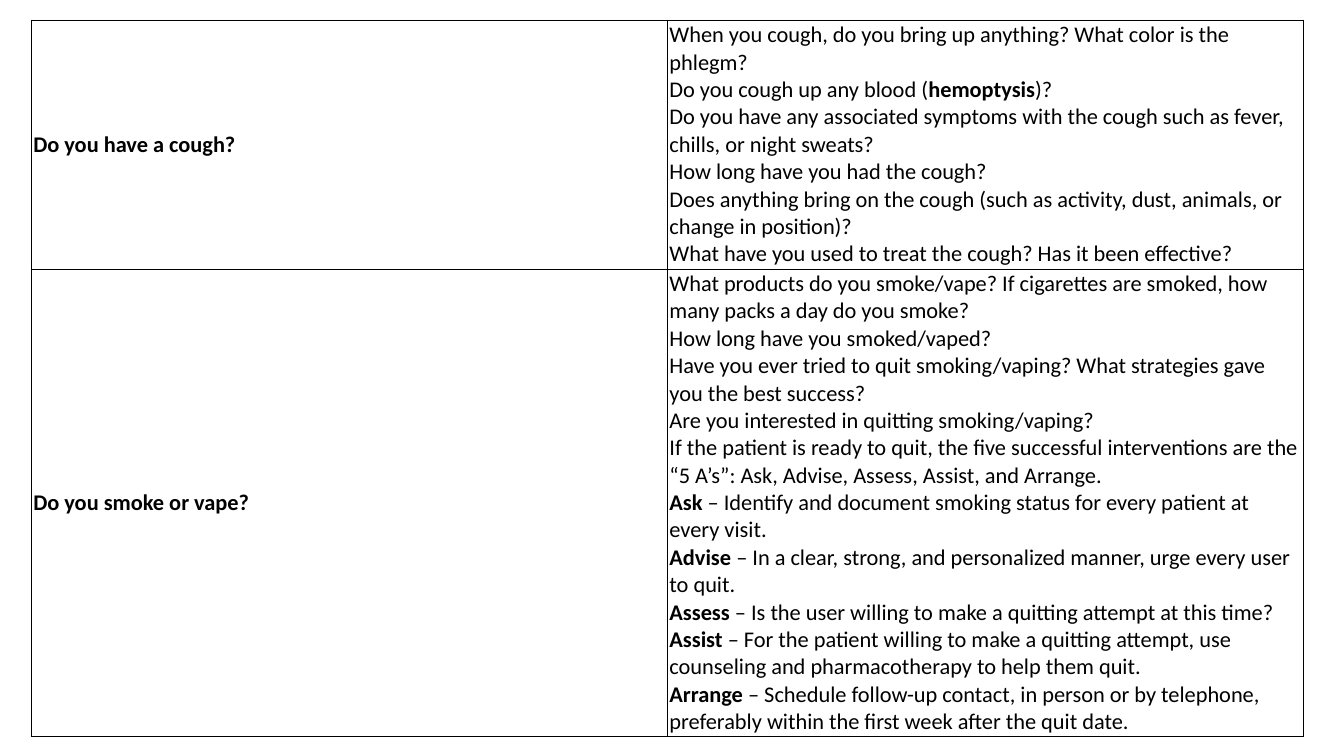
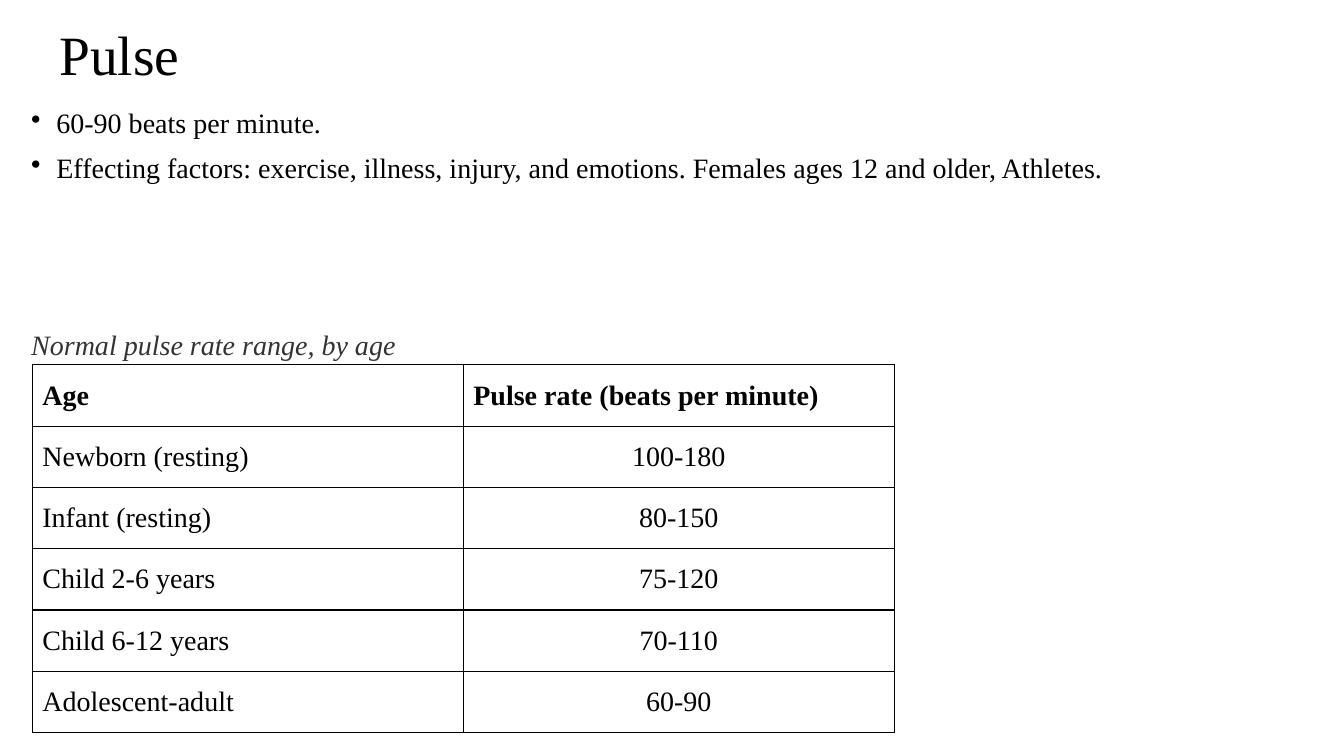
from lxml import etree
from pptx import Presentation
from pptx.dml.color import RGBColor
from pptx.enum.text import MSO_ANCHOR, PP_ALIGN
from pptx.oxml.ns import qn
from pptx.util import Inches, Pt

WIDE, HIGH = Inches(13.33), Inches(7.5)
BLACK = RGBColor(0x00, 0x00, 0x00)
GREY = RGBColor(0x33, 0x33, 0x33)
SANS, SERIF = "Calibri", "Times New Roman"
LEFT, CENTER = PP_ALIGN.LEFT, PP_ALIGN.CENTER
TOP, MIDDLE = MSO_ANCHOR.TOP, MSO_ANCHOR.MIDDLE
INDENT = Inches(0.25)
TIGHT = (Inches(0.02), Inches(0.01))
ROOMY = (Inches(0.1), Inches(0.05))

# A list holds one paragraph per item; ** marks bold words.
COUGH = [
    "When you cough, do you bring up anything? What color is the phlegm?",
    "Do you cough up any blood (**hemoptysis**)?",
    "Do you have any associated symptoms with the cough such as fever, chills, or night sweats?",
    "How long have you had the cough?",
    "Does anything bring on the cough (such as activity, dust, animals, or change in position)?",
    "What have you used to treat the cough? Has it been effective?",
]

SMOKE = [
    "What products do you smoke/vape? If cigarettes are smoked, how many packs a day do you smoke?",
    "How long have you smoked/vaped?",
    "Have you ever tried to quit smoking/vaping? What strategies gave you the best success?",
    "Are you interested in quitting smoking/vaping?",
    "If the patient is ready to quit, the five successful interventions are the “5 A’s”: Ask, Advise, Assess, Assist, and Arrange.",
    "**Ask** – Identify and document smoking status for every patient at every visit.",
    "**Advise** – In a clear, strong, and personalized manner, urge every user to quit.",
    "**Assess** – Is the user willing to make a quitting attempt at this time?",
    "**Assist** – For the patient willing to make a quitting attempt, use counseling and pharmacotherapy to help them quit.",
    "**Arrange** – Schedule follow-up contact, in person or by telephone, preferably within the first week after the quit date.",
]

HISTORY = [
    ("**Do you have a cough?**", COUGH),
    ("**Do you smoke or vape?**", SMOKE),
]

FACTS = [
    "60-90 beats per minute.",
    "Effecting factors: exercise, illness, injury, and emotions. Females ages 12 and older, Athletes.",
]

RATES = [
    ("**Age**", "**Pulse rate (beats per minute)**"),
    ("Newborn (resting)", "100-180"),
    ("Infant (resting)", "80-150"),
    ("Child 2-6 years", "75-120"),
    ("Child 6-12 years", "70-110"),
    ("Adolescent-adult", "60-90"),
]


def across(share):
    """Length as a percentage of the slide's width."""
    return round(WIDE * share / 100)


def down(share):
    """Length as a percentage of the slide's height."""
    return round(HIGH * share / 100)


def write(frame, text, size=20, face=SERIF, color=BLACK, italic=False,
          align=LEFT, lead=1.0, gap=0, bullet=False):
    """Fill a text frame with one string or a list of paragraphs."""
    lines = [text] if isinstance(text, str) else text
    for i, line in enumerate(lines):
        para = frame.add_paragraph() if i else frame.paragraphs[0]
        para.alignment = align
        para.line_spacing = lead
        if i and gap:
            para.space_before = Pt(gap)
        if bullet:
            props = para._p.get_or_add_pPr()
            props.set("marL", str(INDENT))
            props.set("indent", str(-INDENT))
            etree.SubElement(props, qn("a:buChar"), char="•")
        for j, part in enumerate(line.split("**")):
            if part:
                run = para.add_run()
                run.text = part
                font = run.font
                font.size, font.name = Pt(size), face
                font.bold, font.italic = j % 2 == 1, italic
                font.color.rgb = color


def label(slide, text, x, y, w, h, anchor=TOP, **style):
    """Place a text box by shares of the slide."""
    frame = slide.shapes.add_textbox(
        across(x), down(y), across(w), down(h)).text_frame
    frame.word_wrap = True
    frame.vertical_anchor = anchor
    write(frame, text, lead=0.9, **style)


def border(cell):
    """Draw a thin line on all four sides of a cell."""
    props = cell._tc.get_or_add_tcPr()
    for side in ("lnL", "lnR", "lnT", "lnB"):
        line = etree.SubElement(props, qn("a:" + side), w=str(Pt(1)))
        fill = etree.SubElement(line, qn("a:solidFill"))
        etree.SubElement(fill, qn("a:srgbClr"), val=str(BLACK))


def grid(slide, data, x, y, w, rows, pad=ROOMY, center=False, **style):
    """Build a ruled table of equal columns; center affects later columns."""
    count = len(data[0])
    table = slide.shapes.add_table(
        len(data), count, across(x), down(y), across(w), down(sum(rows))).table
    table.first_row = table.horz_banding = False
    for col in table.columns:
        col.width = across(w / count)
    for r, texts in enumerate(data):
        table.rows[r].height = down(rows[r])
        for c, text in enumerate(texts):
            cell = table.cell(r, c)
            border(cell)
            cell.fill.background()
            cell.vertical_anchor = MIDDLE
            cell.margin_left = cell.margin_right = pad[0]
            cell.margin_top = cell.margin_bottom = pad[1]
            align = CENTER if center and r and c else LEFT
            write(cell.text_frame, text, align=align, **style)


def main():
    deck = Presentation()
    deck.slide_width, deck.slide_height = WIDE, HIGH
    blank = deck.slide_layouts[6]

    # Cough and smoking history
    slide = deck.slides.add_slide(blank)
    grid(slide, HISTORY, 2.33, 2.67, 94.67, [32.93, 61.47],
         pad=TIGHT, size=16, face=SANS)

    # Pulse
    slide = deck.slides.add_slide(blank)
    label(slide, "Pulse", 3.68, 3.6, 25.2, 8, anchor=MIDDLE, size=39.6)
    label(slide, FACTS, 1.58, 13.87, 88.37, 12, gap=10, bullet=True)
    label(slide, "Normal pulse rate range, by age", 1.58, 43.2, 88.37, 5.33,
          color=GREY, italic=True)
    grid(slide, RATES, 2.4, 48.27, 64.14, [8.11] * len(RATES), center=True)

    deck.save("out.pptx")


if __name__ == "__main__":
    main()
